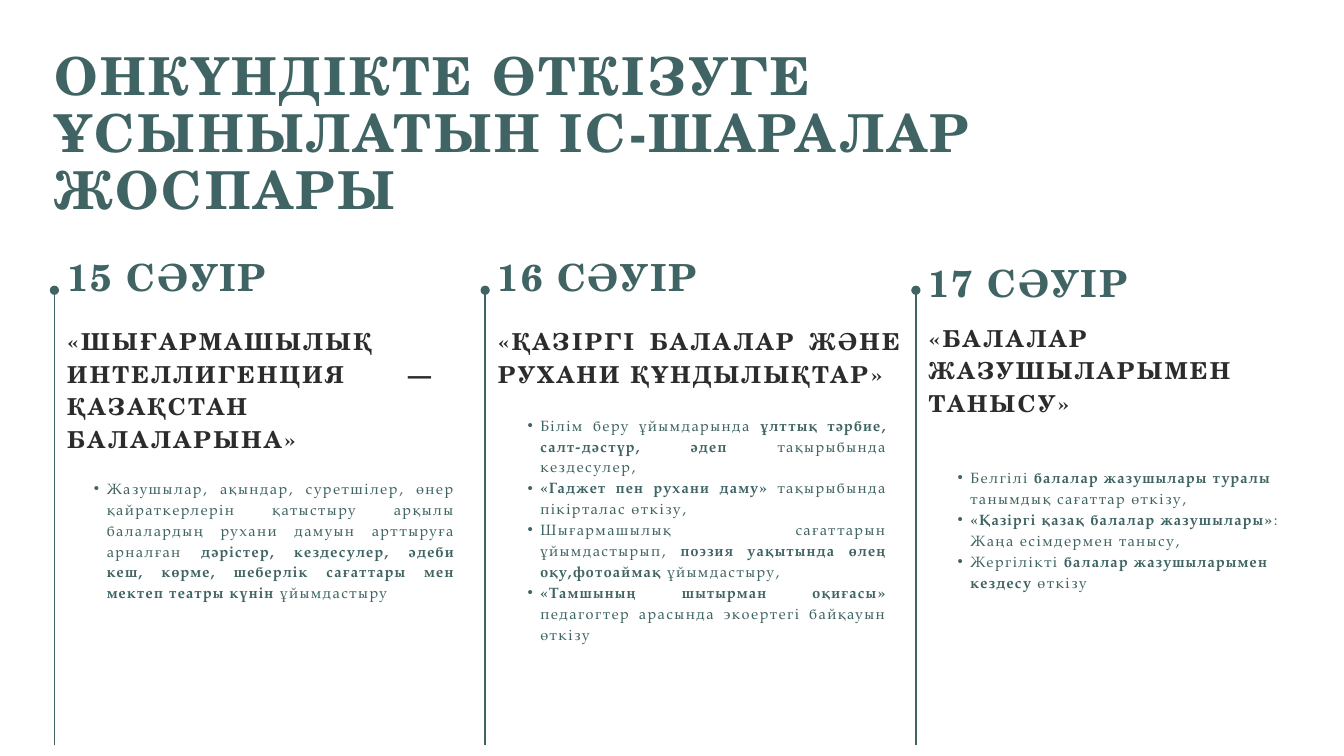
import pptx
import pptx.dml.color
import pptx.enum.shapes
import pptx.enum.text
import pptx.oxml.ns
import pptx.util
from lxml import etree

Pt = pptx.util.Pt
Align = pptx.enum.text.PP_ALIGN
JUSTIFY, LEFT = Align.JUSTIFY, Align.LEFT

GREEN, BLACK = "3F6463", "2C2C2C"
SERIF, TEXT = "TeX Gyre Schola", "TeX Gyre Pagella"
FIRST_LEFT, COLUMN_STEP = 72, 461.5
RULE_OFFSET, RULE_TOP, RULE_BOTTOM = -13.7, 311, 798.5

# Text between asterisks is bold. Each box is (top, width, height).
COLUMNS = [
    {
        "date": "15 СӘУІР", "date_top": 276.5,
        "topic": "«ШЫҒАРМАШЫЛЫҚ ИНТЕЛЛИГЕНЦИЯ — ҚАЗАҚСТАН БАЛАЛАРЫНА»",
        "topic_box": (345.6, 392.4, 137.5),
        "events": [
            "Жазушылар, ақындар, суретшілер, өнер қайраткерлерін қатыстыру "
            "арқылы балалардың рухани дамуын арттыруға арналған *дәрістер, "
            "кездесулер, әдеби кеш, көрме, шеберлік сағаттары мен мектеп "
            "театры күнін* ұйымдастыру",
        ],
        "events_indent": 15, "events_box": (510.5, 401, 129.6), "align": JUSTIFY,
    },
    {
        "date": "16 СӘУІР", "date_top": 276.5,
        "topic": "«ҚАЗІРГІ БАЛАЛАР ЖӘНЕ РУХАНИ ҚҰНДЫЛЫҚТАР»",
        "topic_box": (345.6, 433.4, 68.4),
        "events": [
            "Білім беру ұйымдарында *ұлттық тәрбие, салт-дәстүр, әдеп* "
            "тақырыбында кездесулер,",
            "*«Гаджет пен рухани даму» *тақырыбында пікірталас өткізу,",
            "Шығармашылық сағаттарын ұйымдастырып,* поэзия уақытында өлең "
            "оқу,фотоаймақ* ұйымдастыру,",
            "*«Тамшының шытырман оқиғасы»* педагогтер арасында экоертегі "
            "байқауын өткізу",
        ],
        "events_indent": 18, "events_box": (442.8, 398.9, 238.3), "align": JUSTIFY,
    },
    {
        "date": "17 СӘУІР", "date_top": 283.7,
        "topic": "«БАЛАЛАР ЖАЗУШЫЛАРЫМЕН ТАНЫСУ»",
        "topic_box": (342, 370, 103),
        "events": [
            "Белгілі *балалар жазушылары туралы* танымдық сағаттар өткізу,",
            "*«Қазіргі қазақ балалар жазушылары»*: Жаңа есімдермен танысу,",
            "Жергілікті *балалар жазушыларымен кездесу* өткізу",
        ],
        "events_indent": 17.3, "events_box": (499, 370, 151.2), "align": LEFT,
    },
]


def color(value):
    return pptx.dml.color.RGBColor.from_string(value)


def add_child(parent, tag, **attributes):
    return etree.SubElement(parent, pptx.oxml.ns.qn(tag), attributes)


class SlideBuilder:
    STYLES = {
        "title": dict(font=SERIF, size=56, color=GREEN, bold=True, line=61, tracking=2.8),
        "date": dict(font=SERIF, size=40, color=GREEN, bold=True, line=43.6, tracking=2),
        "topic": dict(font=SERIF, size=25, color=BLACK, bold=True, line=35, tracking=2.5),
        "event": dict(font=TEXT, size=16, color=GREEN, bold=False, line=22.4, tracking=1.6),
    }

    def __init__(self, page):
        self.page = page

    def fill_text(self, shape, texts, style, align=LEFT, bullets=False):
        frame = shape.text_frame
        settings = dict(
            margin_left=0, margin_top=0, margin_right=0, margin_bottom=0,
            word_wrap=True, vertical_anchor=pptx.enum.text.MSO_ANCHOR.TOP,
            auto_size=pptx.enum.text.MSO_AUTO_SIZE.SHAPE_TO_FIT_TEXT,
        )
        for name, value in settings.items():
            setattr(frame, name, value)
        for index, text in enumerate(texts):
            para = frame.add_paragraph() if index else frame.paragraphs[0]
            para.alignment = align
            para.line_spacing = Pt(self.STYLES[style]["line"])
            para.space_before = Pt(0)
            if bullets:
                self.add_bullet(para)
            self.add_spans(para, text, self.STYLES[style])

    def add_bullet(self, para):
        para.level = 1
        properties = para._p.get_or_add_pPr()
        properties.set("marL", str(Pt(27.4)))
        properties.set("indent", str(Pt(-13.7)))
        add_child(properties, "a:buFont", typeface="Arial")
        add_child(properties, "a:buChar", char="•")

    def add_spans(self, para, text, style):
        for index, part in enumerate(text.split("*")):
            if not part:
                continue
            span = para.add_run()
            span.text = part
            values = dict(name=style["font"], size=Pt(style["size"]),
                          bold=style["bold"] or index % 2 == 1)
            for name, value in values.items():
                setattr(span.font, name, value)
            span.font.color.rgb = color(style["color"])
            span._r.get_or_add_rPr().set("spc", str(round(style["tracking"] * 100)))

    def title(self, text, left, top, width, height):
        box = self.page.shapes.title
        for name, value in dict(left=left, top=top, width=width, height=height).items():
            setattr(box, name, Pt(value))
        self.fill_text(box, [text], "title")

    def text(self, texts, style, left, top, width, height, **options):
        box = self.page.shapes.add_textbox(Pt(left), Pt(top), Pt(width), Pt(height))
        self.fill_text(box, texts, style, **options)

    def rule(self, left):
        """Vertical line that ends in a dot at the top."""
        rule = self.page.shapes.add_connector(
            pptx.enum.shapes.MSO_CONNECTOR.STRAIGHT,
            Pt(left), Pt(RULE_BOTTOM), Pt(left), Pt(RULE_TOP))
        rule.line.color.rgb = color(GREEN)
        rule.line.width = Pt(1.5)
        add_child(rule.line._get_or_add_ln(), "a:tailEnd", type="oval", w="lg", len="lg")
        add_child(rule._element.spPr, "a:effectLst")

    def column(self, left, content):
        self.rule(left + RULE_OFFSET)
        self.text([content["date"]], "date", left, content["date_top"], 370, 44)
        self.text([content["topic"]], "topic", left, *content["topic_box"], align=JUSTIFY)
        self.text(content["events"], "event", left + content["events_indent"],
                  *content["events_box"], align=content["align"], bullets=True)


def main():
    deck = pptx.Presentation()
    deck.slide_width, deck.slide_height = Pt(1440), Pt(810)
    title_only = deck.slide_layouts.get_by_name("Title Only")
    builder = SlideBuilder(deck.slides.add_slide(title_only))
    builder.title("ОНКҮНДІКТЕ ӨТКІЗУГЕ ҰСЫНЫЛАТЫН ІС-ШАРАЛАР ЖОСПАРЫ",
                  58.3, 52.6, 1306, 122.4)
    for index, content in enumerate(COLUMNS):
        builder.column(FIRST_LEFT + index * COLUMN_STEP, content)
    deck.save("out.pptx")


if __name__ == "__main__":
    main()
